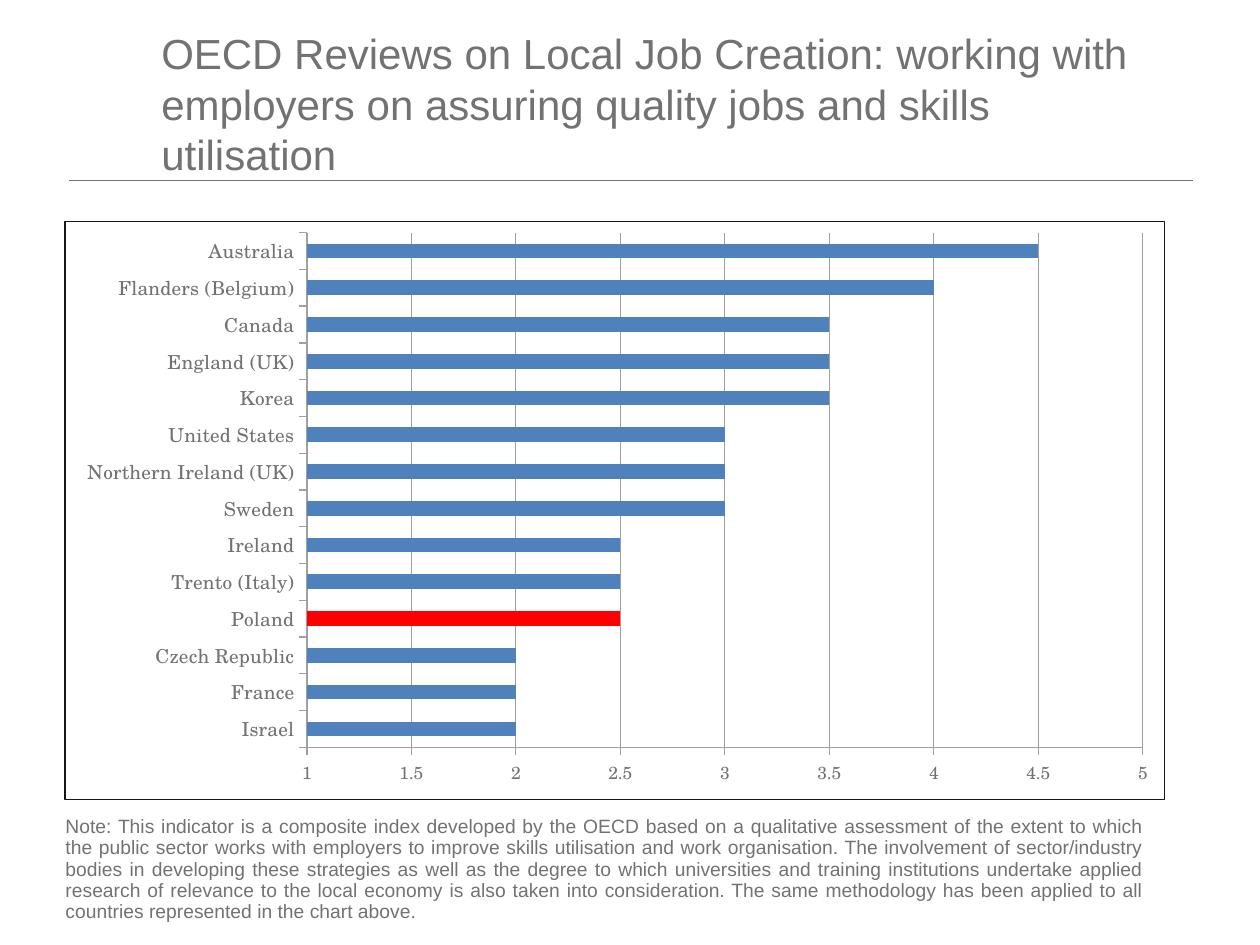
from lxml import etree
from pptx import Presentation
from pptx.chart.data import CategoryChartData
from pptx.dml.color import RGBColor
from pptx.enum.chart import XL_CHART_TYPE, XL_TICK_MARK
from pptx.enum.shapes import MSO_CONNECTOR
from pptx.enum.text import MSO_ANCHOR, PP_ALIGN
from pptx.oxml import parse_xml
from pptx.oxml.ns import nsdecls, qn
from pptx.util import Inches, Pt

BAR_CLUSTERED = XL_CHART_TYPE.BAR_CLUSTERED
TICK_OUTSIDE = XL_TICK_MARK.OUTSIDE
STRAIGHT = MSO_CONNECTOR.STRAIGHT
MIDDLE = MSO_ANCHOR.MIDDLE
LEFT, JUSTIFY = PP_ALIGN.LEFT, PP_ALIGN.JUSTIFY

GREY = RGBColor(0x72, 0x72, 0x72)
AXIS_GREY = RGBColor(0xA0, 0xA0, 0xA0)
BLUE = RGBColor(0x4F, 0x81, 0xBD)
RED = RGBColor(0xFF, 0x00, 0x00)
BORDER = RGBColor(0x17, 0x17, 0x17)
TEXT_FONT = "Arial"
CHART_FONT = "TeX Gyre Schola"

TITLE = ("OECD Reviews on Local Job Creation: working with employers "
         "on assuring quality jobs and skills utilisation")
NOTE = (
    "Note: This indicator is a composite index developed by the OECD based on a "
    "qualitative assessment of the extent to which the public sector works with "
    "employers to improve skills utilisation and work organisation. The involvement "
    "of sector/industry bodies in developing these strategies as well as the degree "
    "to which universities and training institutions undertake applied research of "
    "relevance to the local economy is also taken into consideration. The same "
    "methodology has been applied to all countries represented in the chart above."
)
SCORES = {
    "Israel": 2, "France": 2, "Czech Republic": 2, "Poland": 2.5,
    "Trento (Italy)": 2.5, "Ireland": 2.5, "Sweden": 3,
    "Northern Ireland (UK)": 3, "United States": 3, "Korea": 3.5,
    "England (UK)": 3.5, "Canada": 3.5, "Flanders (Belgium)": 4, "Australia": 4.5,
}
HIGHLIGHTED = "Poland"


def format_font(font, size, name=TEXT_FONT, color=GREY):
    font.size, font.name, font.bold = Pt(size), name, False
    font.color.rgb = color


def write_text(frame, text, size, align=LEFT):
    frame.word_wrap = True
    paragraph = frame.paragraphs[0]
    paragraph.alignment = align
    run = paragraph.add_run()
    run.text = text
    format_font(run.font, size)


def add_heading(slide, left, top, width, height):
    title = slide.shapes.title
    title.left, title.top, title.width, title.height = left, top, width, height
    title.text_frame.vertical_anchor = MIDDLE
    write_text(title.text_frame, TITLE, 24)


def add_rule(slide, left, top, width):
    rule = slide.shapes.add_connector(STRAIGHT, left, top, left + width, top)
    rule.line.color.rgb = GREY
    rule.line.width = Pt(0.5)
    etree.SubElement(rule._element.spPr, qn("a:effectLst"))


def set_plot_layout(chart, x, y, w, h):
    """Place the inner plot area, in fractions of the chart."""
    plot_area = chart._chartSpace.chart.plotArea
    for old in plot_area.findall(qn("c:layout")):
        plot_area.remove(old)
    plot_area.insert(0, parse_xml(
        f'<c:layout {nsdecls("c")}><c:manualLayout><c:layoutTarget val="inner"/>'
        '<c:xMode val="edge"/><c:yMode val="edge"/>'
        f'<c:x val="{x}"/><c:y val="{y}"/><c:w val="{w}"/><c:h val="{h}"/>'
        '</c:manualLayout></c:layout>'))


def set_chart_border(chart, color, points):
    """Outline the chart; the chart font must be set first."""
    border = parse_xml(
        f'<c:spPr {nsdecls("c", "a")}><a:noFill/><a:ln w="{Pt(points)}">'
        f'<a:solidFill><a:srgbClr val="{color}"/></a:solidFill></a:ln></c:spPr>')
    chart._chartSpace.find(qn("c:txPr")).addprevious(border)


def add_score_chart(slide, left, top, width, height):
    scores = CategoryChartData()
    scores.categories = list(SCORES)
    scores.add_series("Series 1", list(SCORES.values()))
    chart = slide.shapes.add_chart(
        BAR_CLUSTERED, left, top, width, height, scores).chart
    chart.has_legend = False
    chart.has_title = False
    format_font(chart.font, 10, CHART_FONT)
    set_chart_border(chart, BORDER, 0.75)
    set_plot_layout(chart, 0.22, 0.02, 0.76, 0.89)

    plot = chart.plots[0]
    plot.gap_width = 150
    plot.vary_by_categories = False
    bars = plot.series[0]
    bars.format.fill.solid()
    bars.format.fill.fore_color.rgb = BLUE
    highlight = bars.points[list(SCORES).index(HIGHLIGHTED)].format.fill
    highlight.solid()
    highlight.fore_color.rgb = RED

    countries, score_axis = chart.category_axis, chart.value_axis
    format_font(countries.tick_labels.font, 11, CHART_FONT)
    score_axis.minimum_scale, score_axis.maximum_scale = 1, 5
    score_axis.major_unit = 0.5
    score_axis.has_major_gridlines = True
    for axis in (countries, score_axis):
        axis.major_tick_mark = TICK_OUTSIDE
        axis.format.line.color.rgb = AXIS_GREY
    score_axis.major_gridlines.format.line.color.rgb = AXIS_GREY


def add_note(slide, left, top, width, height):
    table = slide.shapes.add_table(1, 1, left, top, width, height).table
    table.first_row = table.horz_banding = False
    cell = table.cell(0, 0)
    cell.fill.background()
    cell.vertical_anchor = MIDDLE
    cell.margin_left = cell.margin_right = cell.margin_top = Inches(0.01)
    cell.margin_bottom = 0
    write_text(cell.text_frame, NOTE, 11, JUSTIFY)


def main():
    prs = Presentation()
    prs.slide_width, prs.slide_height = Inches(10), Inches(7.5)
    slide = prs.slides.add_slide(prs.slide_layouts[5])
    add_rule(slide, Inches(0.55), Inches(1.43), Inches(8.92))
    add_heading(slide, Inches(1.18), Inches(0.26), Inches(8.11), Inches(1.12))
    add_score_chart(slide, Inches(0.51), Inches(1.75), Inches(8.74), Inches(4.6))
    add_note(slide, Inches(0.51), Inches(6.43), Inches(8.58), Inches(0.93))
    prs.save("out.pptx")


if __name__ == "__main__":
    main()
